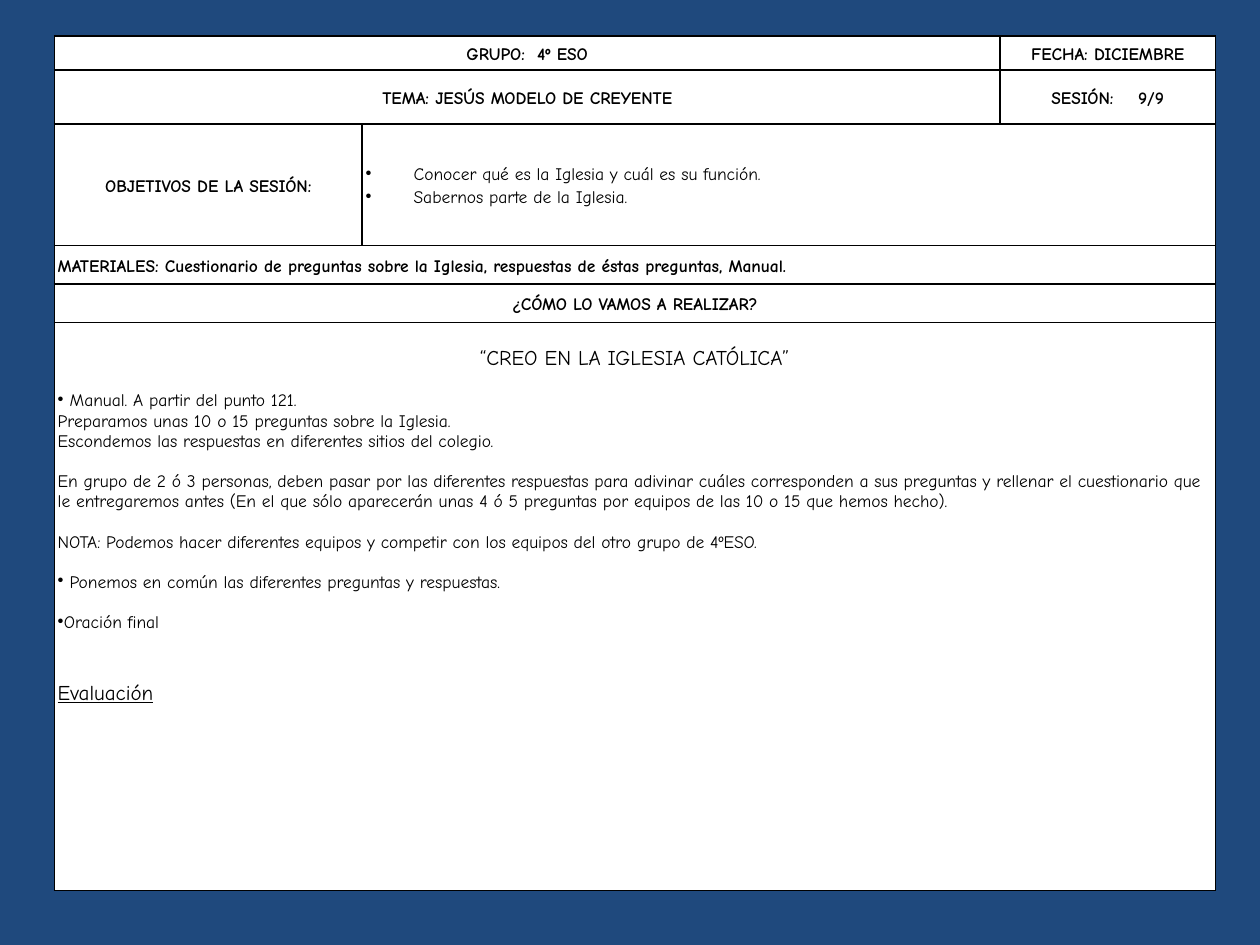
from lxml import etree
from pptx import Presentation
from pptx.dml.color import RGBColor
from pptx.enum import text
from pptx.oxml import ns
from pptx.util import Pt

NAVY = RGBColor(0x1F, 0x49, 0x7D)
WHITE = RGBColor(0xFF, 0xFF, 0xFF)
BLACK = RGBColor(0, 0, 0)
FONT = "Comic Neue"
LINE = 11.5
COLUMNS = (176, 364.5, 123)
ROWS = (19.5, 31, 69.5, 22, 22, 324.5)
CENTER = text.PP_ALIGN.CENTER
LEFT = text.PP_ALIGN.LEFT

HEADINGS = [
    (0, 0, 1, [("GRUPO:", "4º ESO", 3.5)], CENTER),
    (0, 2, 2, [("FECHA: DICIEMBRE",)], CENTER),
    (1, 0, 1, [("TEMA: JESÚS MODELO DE CREYENTE",)], CENTER),
    (1, 2, 2, [("SESIÓN:", "9/9", 10.5)], CENTER),
    (2, 0, 0, [("OBJETIVOS DE LA SESIÓN:",)], CENTER),
    (3, 0, 2, [("MATERIALES: Cuestionario de preguntas sobre la Iglesia, "
                "respuestas de éstas preguntas, Manual.",)], LEFT),
    (4, 0, 2, [("¿CÓMO LO VAMOS A REALIZAR?",)], CENTER),
]
OBJECTIVES = [
    "Conocer qué es la Iglesia y cuál es su función.",
    "Sabernos parte de la Iglesia.",
]
ACTIVITIES = [
    ("“CREO EN LA IGLESIA CATÓLICA”", dict(size=12, align=CENTER)),
    (" Manual. A partir del punto 121.", dict(before=LINE, bullet=True)),
    ("Preparamos unas 10 o 15 preguntas sobre la Iglesia.", {}),
    ("Escondemos las respuestas en diferentes sitios del colegio.", {}),
    ("En grupo de 2 ó 3 personas, deben pasar por las diferentes respuestas "
     "para adivinar cuáles corresponden a sus preguntas y rellenar el "
     "cuestionario que le entregaremos antes (En el que sólo aparecerán unas "
     "4 ó 5 preguntas por equipos de las 10 o 15 que hemos hecho).",
     dict(before=LINE)),
    ("NOTA: Podemos hacer diferentes equipos y competir con los equipos del "
     "otro grupo de 4ºESO.", dict(before=LINE)),
    (" Ponemos en común las diferentes preguntas y respuestas.",
     dict(before=LINE, bullet=True)),
    ("Oración final", dict(before=LINE, bullet=True)),
    ("Evaluación", dict(size=12, before=27.5, underline=True)),
]


def apply(target, values):
    for name, value in values.items():
        setattr(target, name, value)


def add_run(paragraph, words, size=10, bold=False, underline=None):
    run = paragraph.add_run()
    run.text = words
    apply(run.font, dict(name=FONT, size=Pt(size), bold=bold, underline=underline))
    run.font.color.rgb = BLACK
    return run


def next_paragraph(cell):
    frame = cell.text_frame
    first = frame.paragraphs[0]
    return frame.add_paragraph() if first.runs else first


def write(cell, parts, align=LEFT, spacing=1.0, before=0, bullet=False,
          hanging=0, **font):
    paragraph = next_paragraph(cell)
    apply(paragraph, dict(alignment=align, line_spacing=spacing, space_before=Pt(before)))
    properties = paragraph._p.get_or_add_pPr()
    properties.set("marL", str(Pt(hanging)))
    properties.set("indent", str(-Pt(hanging)))
    if bullet:
        etree.SubElement(properties, ns.qn("a:buChar")).set("char", "•")
    add_run(paragraph, parts[0], **font)
    if len(parts) == 3:
        gap = add_run(paragraph, " ", **font)
        gap._r.get_or_add_rPr().set("spc", str(int(parts[2] * 100)))
        add_run(paragraph, parts[1], **font)


def style_cell(cell):
    properties = cell._tc.get_or_add_tcPr()
    for side in ("lnL", "lnR", "lnT", "lnB"):
        border = etree.SubElement(properties, ns.qn("a:" + side), w=str(Pt(1)))
        fill = etree.SubElement(border, ns.qn("a:solidFill"))
        etree.SubElement(fill, ns.qn("a:srgbClr")).set("val", str(BLACK))
    cell.fill.solid()
    cell.fill.fore_color.rgb = WHITE
    apply(cell, dict(margin_left=Pt(2), margin_right=Pt(2), margin_top=0,
                     margin_bottom=0, vertical_anchor=text.MSO_ANCHOR.MIDDLE))


def add_session_plan(slide, left, top):
    frame = slide.shapes.add_table(len(ROWS), len(COLUMNS), Pt(left), Pt(top),
                                   Pt(sum(COLUMNS)), Pt(sum(ROWS)))
    plan = frame.table
    apply(plan, dict(first_row=False, horz_banding=False))
    for column, width in zip(plan.columns, COLUMNS):
        column.width = Pt(width)
    for row, height in zip(plan.rows, ROWS):
        row.height = Pt(height)
    for cell in plan.iter_cells():
        style_cell(cell)

    for row, first, last, lines, align in HEADINGS:
        heading = plan.cell(row, first)
        if last > first:
            heading.merge(plan.cell(row, last))
        for parts in lines:
            write(heading, parts, align, spacing=1.15, bold=True)

    objectives = plan.cell(2, 1)
    objectives.merge(plan.cell(2, 2))
    for objective in OBJECTIVES:
        write(objectives, (objective,), spacing=1.15, bullet=True, hanging=27.4)

    activities = plan.cell(5, 0)
    activities.merge(plan.cell(5, 2))
    apply(activities, dict(margin_top=Pt(13.8), vertical_anchor=text.MSO_ANCHOR.TOP))
    for words, options in ACTIVITIES:
        write(activities, (words,), **options)


def main():
    deck = Presentation()
    apply(deck, dict(slide_width=Pt(720), slide_height=Pt(540)))
    slide = deck.slides.add_slide(deck.slide_layouts[6])
    slide.background.fill.solid()
    slide.background.fill.fore_color.rgb = NAVY
    add_session_plan(slide, left=31, top=20.5)
    deck.save("out.pptx")


if __name__ == "__main__":
    main()
